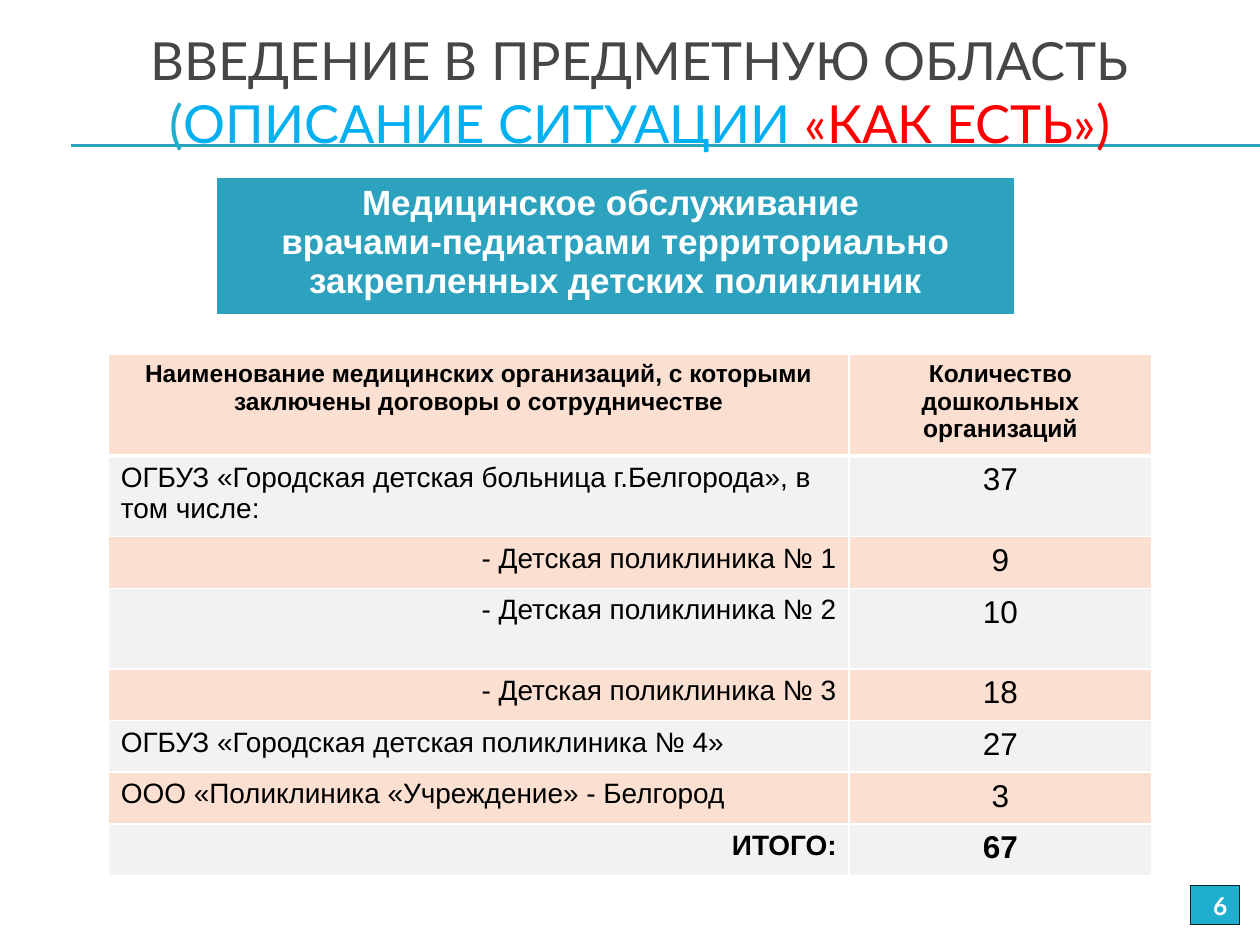
from lxml import etree
from pptx import Presentation
from pptx.dml.color import RGBColor
from pptx.enum.shapes import MSO_CONNECTOR, MSO_SHAPE
from pptx.enum.text import MSO_ANCHOR, PP_ALIGN
from pptx.oxml.ns import qn
from pptx.util import Inches, Pt

LEFT, CENTER, RIGHT = PP_ALIGN.LEFT, PP_ALIGN.CENTER, PP_ALIGN.RIGHT
MIDDLE = MSO_ANCHOR.MIDDLE
STRAIGHT = MSO_CONNECTOR.STRAIGHT
RECTANGLE = MSO_SHAPE.RECTANGLE

WIDTH, HEIGHT = Inches(10), Inches(7.5)
COLORS = {
    "white": "FFFFFF", "black": "000000", "rule": "2DA2BF",
    "title": "464646", "bracket": "1FAECD", "subject": "00B0F0",
    "emphasis": "FF0000", "peach": "FBE0D1", "gray": "F2F2F2",
    "badge_line": "062329",
}
TITLE_LINES = [
    [("ВВЕДЕНИЕ В ПРЕДМЕТНУЮ ОБЛАСТЬ", "title")],
    [("(", "bracket"), ("ОПИСАНИЕ СИТУАЦИИ ", "subject"), ("«КАК ЕСТЬ»)", "emphasis")],
]
BANNER = ("Медицинское обслуживание \n"
          "врачами-педиатрами территориально закрепленных детских поликлиник")
HEADERS = ("Наименование медицинских организаций, с которыми заключены договоры о сотрудничестве",
           "Количество дошкольных организаций")
TALL, LOW = 0.64, 0.41
ORGANIZATIONS = [
    ("ОГБУЗ «Городская детская больница г.Белгорода», в том числе:", "37", LEFT, TALL),
    ("- Детская поликлиника № 1", "9", RIGHT, LOW),
    ("- Детская поликлиника № 2", "10", RIGHT, TALL),
    ("- Детская поликлиника № 3", "18", RIGHT, LOW),
    ("ОГБУЗ «Городская детская поликлиника № 4»", "27", LEFT, LOW),
    ("ООО «Поликлиника «Учреждение» - Белгород", "3", LEFT, LOW),
    ("ИТОГО:", "67", RIGHT, LOW),
]


def color(name):
    return RGBColor.from_string(COLORS[name])


def style_run(run, font, size, color_name, bold=False):
    run.font.name = font
    run.font.size = Pt(size)
    run.font.bold = bold
    run.font.color.rgb = color(color_name)


def style_text(text_frame, alignment, *style):
    for paragraph in text_frame.paragraphs:
        paragraph.alignment = alignment
        for run in paragraph.runs:
            style_run(run, *style)


def add_rule(slide, y):
    connector = slide.shapes.add_connector(STRAIGHT, Inches(0.56), Inches(y), WIDTH, Inches(y))
    connector.line.color.rgb = color("rule")
    connector.line.width = Pt(0.75)
    etree.SubElement(connector._element.spPr, qn("a:effectLst"))


def add_title(slide):
    box = slide.shapes.add_textbox(Inches(0.33), Inches(0.22), Inches(9.5), Inches(1))
    text_frame = box.text_frame
    text_frame.word_wrap = True
    text_frame.margin_top = text_frame.margin_bottom = 0
    text_frame.vertical_anchor = MIDDLE
    paragraph = text_frame.paragraphs[0]
    paragraph.alignment = CENTER
    for index, line in enumerate(TITLE_LINES):
        if index:
            paragraph.add_line_break()
        for text, color_name in line:
            run = paragraph.add_run()
            run.text = text
            style_run(run, "Lato", 30, color_name)


def set_borders(cell, top=1, bottom=1):
    properties = cell._tc.get_or_add_tcPr()
    for side, width in (("L", 1), ("R", 1), ("T", top), ("B", bottom)):
        border = etree.SubElement(properties, qn(f"a:ln{side}"), w=str(Pt(width)))
        fill = etree.SubElement(border, qn("a:solidFill"))
        etree.SubElement(fill, qn("a:srgbClr"), val=COLORS["white"])


def fill_cell(cell, text, fill, alignment, size, color_name, bold, top=1, bottom=1):
    set_borders(cell, top, bottom)
    cell.fill.solid()
    cell.fill.fore_color.rgb = color(fill)
    cell.text_frame.text = text
    style_text(cell.text_frame, alignment, "Arial", size, color_name, bold)


def add_table(slide, left, top, widths, heights):
    frame = slide.shapes.add_table(len(heights), len(widths), Inches(left), Inches(top),
                                   Inches(sum(widths)), Inches(sum(heights)))
    table = frame.table
    for column, width in zip(table.columns, widths):
        column.width = Inches(width)
    for row, height in zip(table.rows, heights):
        row.height = Inches(height)
    return table


def add_banner(slide):
    table = add_table(slide, 1.72, 1.41, [6.33], [1.01])
    fill_cell(table.cell(0, 0), BANNER, "rule", CENTER, 20, "white", True, bottom=3)


def add_organizations(slide):
    heights = [0.81] + [row[3] for row in ORGANIZATIONS]
    table = add_table(slide, 0.86, 2.81, [5.88, 2.4], heights)
    for column, text in enumerate(HEADERS):
        fill_cell(table.cell(0, column), text, "peach", CENTER, 14, "black", True, bottom=3)
    for index, (name, count, alignment, _) in enumerate(ORGANIZATIONS, start=1):
        fill = "gray" if index % 2 else "peach"
        bold = index == len(ORGANIZATIONS)
        top = 3 if index == 1 else 1
        fill_cell(table.cell(index, 0), name, fill, alignment, 16, "black", bold, top)
        fill_cell(table.cell(index, 1), count, fill, CENTER, 18, "black", bold, top)


def add_page_number(slide, number):
    shape = slide.shapes.add_shape(RECTANGLE, Inches(9.45), Inches(7.03),
                                   Inches(0.39), Inches(0.31))
    shape.shadow.inherit = False
    shape.fill.solid()
    shape.fill.fore_color.rgb = color("bracket")
    shape.line.color.rgb = color("badge_line")
    shape.line.width = Pt(0.75)
    shape.text_frame.text = number
    shape.text_frame.vertical_anchor = MIDDLE
    style_text(shape.text_frame, RIGHT, "Lato", 14, "white", True)


def main():
    presentation = Presentation()
    presentation.slide_width, presentation.slide_height = WIDTH, HEIGHT
    slide = presentation.slides.add_slide(presentation.slide_layouts[6])
    for y in (1.15, 1.16):
        add_rule(slide, y)
    add_title(slide)
    add_banner(slide)
    add_organizations(slide)
    add_page_number(slide, "6")
    presentation.save("out.pptx")


if __name__ == "__main__":
    main()
